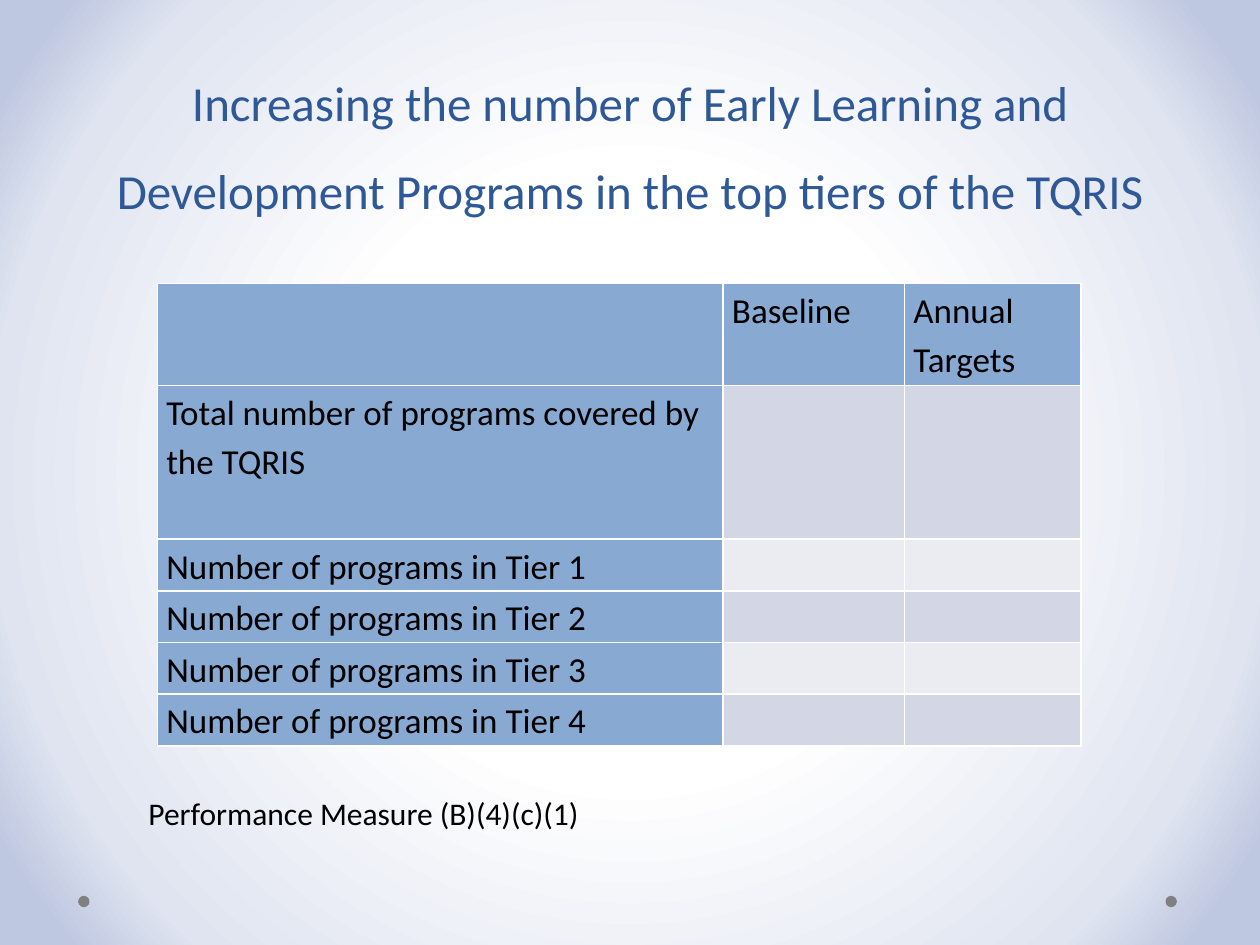
import pptx
import pptx.dml.color
import pptx.enum.shapes
import pptx.enum.text
import pptx.oxml
import pptx.oxml.ns
import pptx.util
from dataclasses import dataclass
from pptx.util import Inches


@dataclass(frozen=True)
class Theme:
    font: str = "Calibri"
    title: str = "2F5897"
    text: str = "000000"
    header: str = "88A9D2"
    bands: tuple = ("D2D6E5", "EAECF2")
    dot: str = "808080"
    backdrop: tuple = ((39, "FFFFFF"), (81, "DFE4F0"), (93, "BFC8E1"))
    title_size: int = 28
    table_size: int = 20
    note_size: int = 18


theme = Theme()


def rgb(value):
    return pptx.dml.color.RGBColor.from_string(value)


def style(para, size, color):
    for span in para.runs:
        span.font.name = theme.font
        span.font.size = pptx.util.Pt(size)
        span.font.bold = False
        span.font.color.rgb = rgb(color)


deck = pptx.Presentation()
deck.slide_width, deck.slide_height = Inches(10), Inches(7.5)
page = deck.slides.add_slide(deck.slide_layouts[5])

# Background: circular gradient, light in the centre
page.background.fill.gradient()
gradient = page.background.fill._fill._gradFill
for child in list(gradient):
    gradient.remove(child)
namespace = pptx.oxml.ns.nsdecls("a")
stops = "".join(
    f'<a:gs pos="{position * 1000}"><a:srgbClr val="{color}"/></a:gs>'
    for position, color in theme.backdrop
)
gradient.append(pptx.oxml.parse_xml(f"<a:gsLst {namespace}>{stops}</a:gsLst>"))
gradient.append(pptx.oxml.parse_xml(
    f'<a:path {namespace} path="circle">'
    '<a:fillToRect l="50000" t="50000" r="50000" b="50000"/></a:path>'
))

# Corner dots
for left in (9.25, 0.62):
    dot = page.shapes.add_shape(
        pptx.enum.shapes.MSO_SHAPE.OVAL,
        Inches(left), Inches(7.11), Inches(0.09), Inches(0.09),
    )
    dot.shadow.inherit = False
    dot.fill.solid()
    dot.fill.fore_color.rgb = rgb(theme.dot)
    dot.line.fill.background()

# Title
title = page.shapes.title
title.left, title.top = Inches(0.5), Inches(0.04)
title.width, title.height = Inches(9), Inches(1.75)
frame = title.text_frame
frame.text = (
    "Increasing the number of Early Learning and "
    "Development Programs in the top tiers of the TQRIS"
)
frame.auto_size = pptx.enum.text.MSO_AUTO_SIZE.NONE
frame.vertical_anchor = pptx.enum.text.MSO_ANCHOR.BOTTOM
para = frame.paragraphs[0]
para.alignment = pptx.enum.text.PP_ALIGN.CENTER
para.line_spacing = 1.5
style(para, theme.title_size, theme.title)

# Table: the default style supplies the white cell borders
rows = [
    ("", "Baseline", "Annual Targets"),
    ("Total number of programs covered by the TQRIS", "", ""),
]
rows += [(f"Number of programs in Tier {tier}", "", "") for tier in range(1, 5)]
widths = (4.49, 1.44, 1.4)
heights = (0.81, 1.22) + (0.41,) * 4
table = page.shapes.add_table(
    len(rows), len(widths),
    Inches(1.25), Inches(2.25), Inches(sum(widths)), Inches(sum(heights)),
).table
table.first_col = True
for column, width in zip(table.columns, widths):
    column.width = Inches(width)
for row, height in zip(table.rows, heights):
    row.height = Inches(height)

for row_index, values in enumerate(rows):
    for column_index, value in enumerate(values):
        cell = table.cell(row_index, column_index)
        is_header = row_index == 0 or column_index == 0
        cell.fill.solid()
        cell.fill.fore_color.rgb = rgb(
            theme.header if is_header else theme.bands[(row_index - 1) % 2]
        )
        if value:
            cell.text_frame.text = value
            cell.margin_left = cell.margin_right = Inches(0.07)
            cell.margin_top = cell.margin_bottom = 0
            para = cell.text_frame.paragraphs[0]
            para.line_spacing = 1.15
            para.space_after = pptx.util.Pt(10)
            style(para, theme.table_size, theme.text)

# Note below the table
box = page.shapes.add_textbox(Inches(1.08), Inches(6.25), Inches(3.66), Inches(0.4))
box.text_frame.text = "Performance Measure (B)(4)(c)(1)"
box.text_frame.word_wrap = False
box.text_frame.auto_size = pptx.enum.text.MSO_AUTO_SIZE.SHAPE_TO_FIT_TEXT
style(box.text_frame.paragraphs[0], theme.note_size, theme.text)

deck.save("out.pptx")
